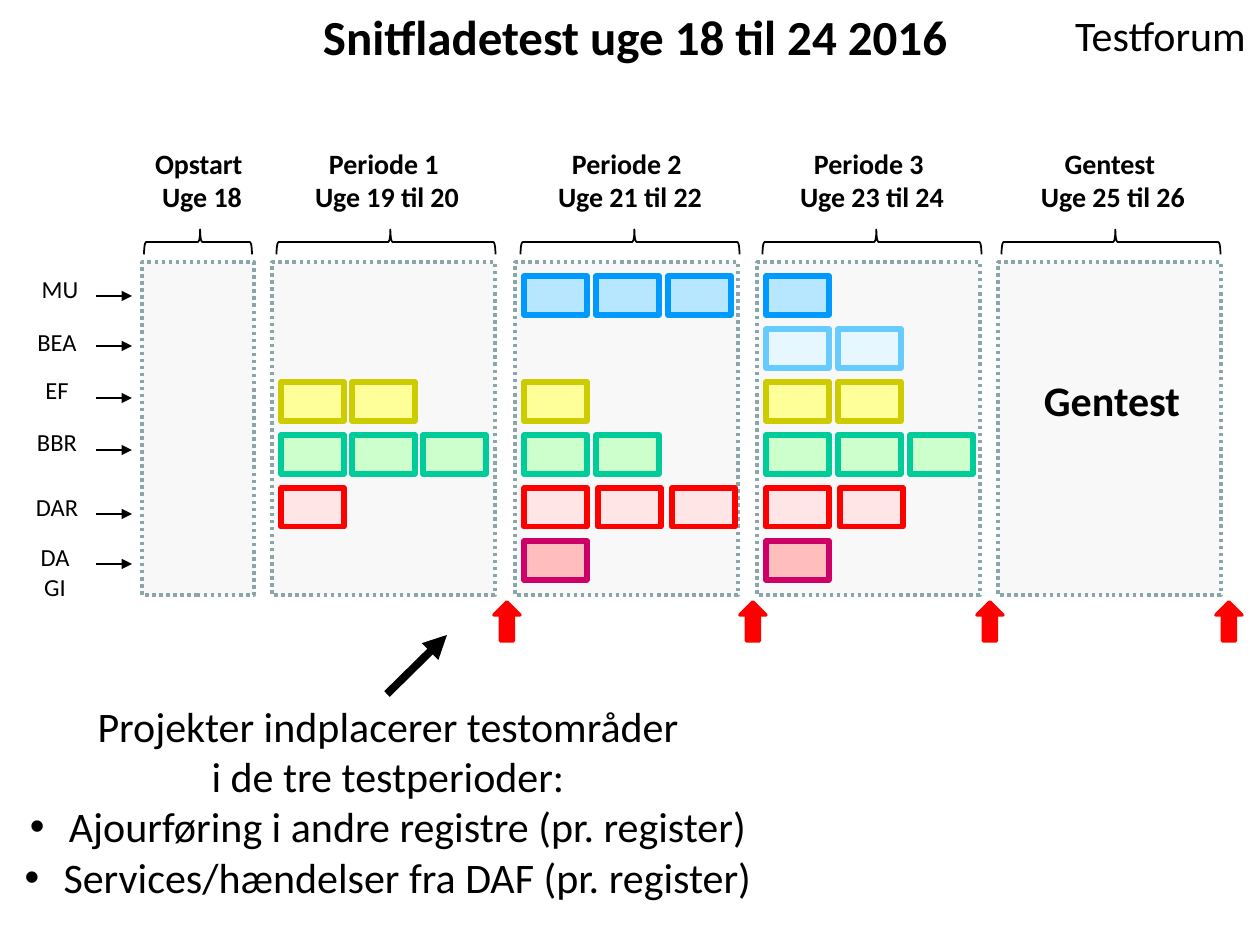
from lxml import etree
from pptx import Presentation, util as u
from pptx.dml.color import RGBColor
from pptx.enum import dml, shapes, text
from pptx.oxml.ns import qn

PX = 914400 / 126
BLACK = RGBColor(0, 0, 0)
RED = RGBColor(0xFF, 0, 0)
PANEL = RGBColor(0xF8, 0xF8, 0xF8)
PANEL_EDGE = RGBColor(0x8A, 0xA6, 0xA8)
BLUE, BLUE_EDGE = RGBColor(0xB7, 0xE7, 0xFF), RGBColor(0, 0x99, 0xFF)
SKY, SKY_EDGE = RGBColor(0xE7, 0xF7, 0xFF), RGBColor(0x66, 0xCC, 0xFF)
YELLOW, YELLOW_EDGE = RGBColor(0xFF, 0xFF, 0x99), RGBColor(0xCC, 0xCC, 0)
GREEN, GREEN_EDGE = RGBColor(0xCC, 0xFF, 0xCC), RGBColor(0, 0xCC, 0x99)
ROSE = RGBColor(0xFF, 0xE5, 0xE5)
PINK, PINK_EDGE = RGBColor(0xFF, 0xBD, 0xBD), RGBColor(0xCC, 0, 0x66)

TITLE = "Snitfladetest uge 18 til 24 2016"
FORUM = "Testforum"
# name, weeks, panel left, panel width, heading centre, brace centre, tile step
PERIODS = [
    ("Opstart ", "Uge 18", 142, 112, 202, 198, 72),
    ("Periode 1 ", "Uge 19 til 20", 272, 223, 387, 386, 71),
    ("Periode 2 ", "Uge 21 til 22", 515, 223, 630, 630, 72),
    ("Periode 3 ", "Uge 23 til 24", 757, 223, 872, 872, 72),
    ("Gentest ", "Uge 25 til 26", 998, 223, 1113, 1111, 72),
]
# register, label left, top, width, arrow height, fill, edge, tiles per period, extra step
REGISTERS = [
    ("MU", 24, 268, 72, 296, BLUE, BLUE_EDGE, (0, 0, 3, 1, 0), 0),
    ("BEA", 21, 321, 72, 346, SKY, SKY_EDGE, (0, 0, 0, 2, 0), 0),
    ("EF", 21, 369, 72, 398, YELLOW, YELLOW_EDGE, (0, 2, 1, 2, 0), 0),
    ("BBR", 21, 421, 72, 450, GREEN, GREEN_EDGE, (0, 3, 2, 3, 0), 0),
    ("DAR", 21, 486, 72, 514, ROSE, RED, (0, 1, 3, 2, 0), 2),
    ("DAGI", 21, 536, 68, 564, PINK, PINK_EDGE, (0, 0, 1, 1, 0), 0),
]
DEADLINES = [494, 740, 977, 1216]
NOTE = ["Projekter indplacerer testområder", "i de tre testperioder:",
        "Ajourføring i andre registre (pr. register)",
        "Services/hændelser fra DAF (pr. register)"]


def emu(*lengths):
    return [u.Emu(round(length * PX)) for length in lengths]


def write(box, lines, size, bold=False, wrap=True, bullets_from=None):
    frame = box.text_frame
    frame.word_wrap = wrap
    frame.auto_size = text.MSO_AUTO_SIZE.NONE
    frame.vertical_anchor = text.MSO_ANCHOR.TOP
    for index, line in enumerate(lines):
        para = frame.paragraphs[0] if index == 0 else frame.add_paragraph()
        para.alignment = text.PP_ALIGN.CENTER
        span = para.add_run()
        span.text = line
        span.font.name = "Calibri"
        span.font.size = u.Pt(size)
        span.font.bold = bold
        span.font.color.rgb = BLACK
        if bullets_from is not None and index >= bullets_from:
            props = para._p.get_or_add_pPr()
            indent = emu(39)[0]
            props.set("marL", str(indent))
            props.set("indent", str(-indent))
            font = etree.SubElement(props, qn("a:buFont"))
            font.set("typeface", "Arial")
            etree.SubElement(props, qn("a:buChar")).set("char", "•")


def add_text(page, place, lines, size, **style):
    write(page.shapes.add_textbox(*emu(*place)), lines, size, **style)


def add_block(page, kind, place, fill, edge, width):
    block = page.shapes.add_shape(kind, *emu(*place))
    block.shadow.inherit = False
    if fill is None:
        block.fill.background()
    else:
        block.fill.solid()
        block.fill.fore_color.rgb = fill
    block.line.color.rgb = edge
    block.line.width = u.Pt(width)
    return block


def add_arrow(page, ends, width):
    arrow = page.shapes.add_connector(shapes.MSO_CONNECTOR.STRAIGHT, *emu(*ends))
    arrow.line.color.rgb = BLACK
    arrow.line.width = u.Pt(width)
    head = etree.SubElement(arrow.line._get_or_add_ln(), qn("a:tailEnd"))
    head.set("type", "triangle")
    etree.SubElement(arrow._element.spPr, qn("a:effectLst"))


def add_period(page, name, weeks, left, width, heading, brace_x, step):
    kinds = shapes.MSO_SHAPE
    panel = add_block(page, kinds.RECTANGLE, (left, 262, width, 333),
                      PANEL, PANEL_EDGE, 2)
    panel.line.dash_style = dml.MSO_LINE.ROUND_DOT
    text_width = width + 9
    add_text(page, (heading - text_width / 2, 140, text_width, 81),
             [name, weeks], 16, bold=True)
    span = width - 4
    brace = add_block(page, kinds.RIGHT_BRACE,
                      (brace_x - 12.5, 242 - span / 2, 25, span), None, BLACK, 1)
    brace.rotation = 270
    brace.adjustments[0] = 0.08
    brace.adjustments[1] = 0.52


def add_register(page, row, name, left, top, width, arrow_y, fill, edge, counts, extra):
    add_text(page, (left, top, width, 53), [name], 14)
    add_arrow(page, (96, arrow_y, 132, arrow_y), 1.5)
    for period, count in zip(PERIODS, counts):
        for column in range(count):
            x = period[2] + 9 + column * (period[6] + extra)
            add_block(page, shapes.MSO_SHAPE.RECTANGLE,
                      (x, 276 + 53 * row, 63, 39), fill, edge, 3)


def main():
    deck = Presentation()
    deck.slide_width, deck.slide_height = emu(1260, 945)
    page = deck.slides.add_slide(deck.slide_layouts[5])
    title = page.shapes.title
    title.left, title.top, title.width, title.height = emu(305, 0, 660, 72)
    write(title, [TITLE], 28, bold=True, wrap=False)
    add_text(page, (1061, 3, 199, 63), [FORUM], 24, wrap=False)
    for period in PERIODS:
        add_period(page, *period)
    for row, register in enumerate(REGISTERS):
        add_register(page, row, *register)
    add_text(page, (1027, 368, 170, 112), ["Gentest"], 24, bold=True)
    for left in DEADLINES:
        add_block(page, shapes.MSO_SHAPE.UP_ARROW, (left, 602, 26, 39), RED, RED, 2)
    add_text(page, (8, 694, 760, 217), NOTE, 24, wrap=False, bullets_from=2)
    add_arrow(page, (387, 694, 447, 635), 4.5)
    deck.save("out.pptx")


if __name__ == "__main__":
    main()
